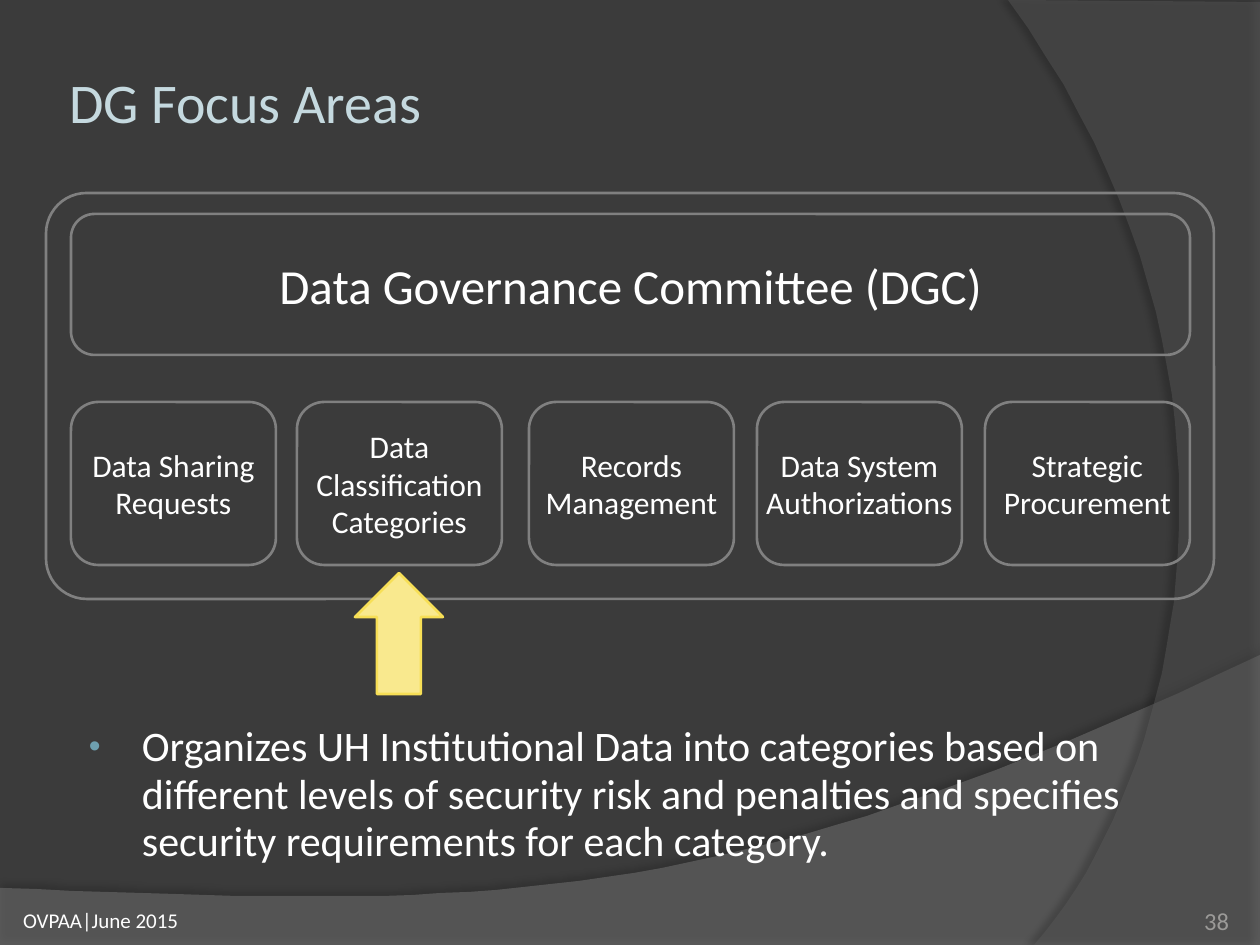
"""Builds the DG Focus Areas slide."""
from lxml.etree import SubElement
from pptx import Presentation
from pptx.dml.color import RGBColor
from pptx.enum.shapes import MSO_SHAPE as Preset
from pptx.enum.text import MSO_ANCHOR as Anchor, PP_ALIGN as Align
from pptx.oxml.ns import qn
from pptx.util import Pt

PX = 7257
WHITE, GRAY, YELLOW = "FFFFFF", "808080", "F9E98E"


def paint(shape, fill=None, line=None, alpha=None):
    shape.shadow.inherit = False
    if fill:
        shape.fill.solid()
        shape.fill.fore_color.rgb = RGBColor.from_string(fill)
    else:
        shape.fill.background()
    if line:
        shape.line.color.rgb = RGBColor.from_string(line)
        shape.line.width = Pt(1.5)
    else:
        shape.line.fill.background()
    if alpha:
        color = shape._element.spPr.find(qn("a:solidFill"))[0]
        SubElement(color, qn("a:alpha"), val=str(alpha * 1000))


def write(shape, text, size, color=WHITE, align=Align.LEFT, anchor=Anchor.MIDDLE, side=13, edge=6):
    frame = shape.text_frame
    frame.word_wrap = True
    frame.vertical_anchor = anchor
    frame.margin_left = frame.margin_right = side * PX
    frame.margin_top = frame.margin_bottom = edge * PX
    paragraph = frame.paragraphs[0]
    paragraph.alignment = align
    run = paragraph.add_run()
    run.text = text
    run.font.name = "Calibri"
    run.font.size = Pt(size)
    run.font.color.rgb = RGBColor.from_string(color)
    return paragraph


deck = Presentation()
deck.slide_width, deck.slide_height = 1260 * PX, 945 * PX
slide = deck.slides.add_slide(deck.slide_layouts[6])
shapes = slide.shapes
slide.background.fill.solid()
slide.background.fill.fore_color.rgb = RGBColor.from_string("3B3B3B")

swooshes = [
    ([(0, 888), (0, 945), (1260, 945), (1260, 655)],
     [(1260, 655), (704, 919), (493, 906), (0, 888)], "7F7F7F", 45, 35, 3.5, 270),
    ([(1260, 2), (1260, 945), (1034, 945)],
     [(1034, 945), (1178, 780), (1283, 378), (1008, 0)], "5E5E5E", 40, 45, 4, 180),
]
for corners, curve, color, alpha, shade, distance, angle in swooshes:
    arc = []
    for step in range(1, 41):
        t = step / 40
        weights = ((1 - t) ** 3, 3 * t * (1 - t) ** 2, 3 * t * t * (1 - t), t ** 3)
        arc.append(tuple(sum(w * p[axis] for w, p in zip(weights, curve)) for axis in (0, 1)))
    builder = shapes.build_freeform(*corners[0], scale=PX)
    builder.add_line_segments(corners[1:] + arc, close=True)
    swoosh = builder.convert_to_shape()
    paint(swoosh, color, alpha=alpha)
    effects = swoosh._element.spPr.find(qn("a:effectLst"))
    shadow = SubElement(effects, qn("a:outerShdw"), blurRad=str(Pt(4)),
                        dist=str(Pt(distance)), dir=str(angle * 60000), rotWithShape="0")
    shadow_color = SubElement(shadow, qn("a:srgbClr"), val="000000")
    SubElement(shadow_color, qn("a:alpha"), val=str(shade * 1000))

footer = shapes.add_textbox(10 * PX, 895 * PX, 294 * PX, 50 * PX)
write(footer, "OVPAA|June 2015", 12)
title = shapes.add_textbox(63 * PX, 38 * PX, 1029 * PX, 127 * PX)
write(title, "DG Focus Areas", 32, color="C5D9DF", side=6)
page_number = shapes.add_textbox(1124 * PX, 885 * PX, 105 * PX, 50 * PX)
write(page_number, "38", 14, color="9B9A98", align=Align.RIGHT, anchor=Anchor.BOTTOM, side=0, edge=0)

committee = shapes.add_shape(Preset.ROUNDED_RECTANGLE, 71 * PX, 214 * PX, 1119 * PX, 141 * PX)
paint(committee, line=GRAY)
write(committee, "Data Governance Committee (DGC)", 28, align=Align.CENTER)

focus_areas = [
    (71, "Data Sharing Requests"),
    (297, "Data Classification Categories"),
    (529, "Records Management"),
    (757, "Data System Authorizations"),
    (985, "Strategic Procurement"),
]
for left, name in focus_areas:
    area = shapes.add_shape(Preset.ROUNDED_RECTANGLE, left * PX, 402 * PX, 205 * PX, 163 * PX)
    paint(area, line=GRAY)
    write(area, name, 18, align=Align.CENTER, side=0)

enclosure = shapes.add_shape(Preset.ROUNDED_RECTANGLE, 46 * PX, 193 * PX, 1168 * PX, 406 * PX)
enclosure.adjustments[0] = 0.1
paint(enclosure, line=GRAY)

pointer = shapes.add_shape(Preset.UP_ARROW, 355 * PX, 573 * PX, 88 * PX, 121 * PX)
paint(pointer, YELLOW, "F7DF56")

description = shapes.add_textbox(71 * PX, 717 * PX, 1110 * PX, 203 * PX)
point = write(description, "Organizes UH Institutional Data into categories based on different levels of "
              "security risk and penalties and specifies security requirements for each category.",
              24, anchor=Anchor.TOP)
point.line_spacing = 0.95
point.space_before = Pt(12)
bullet = point._p.get_or_add_pPr()
bullet.set("marL", str(58 * PX))
bullet.set("indent", str(-53 * PX))
SubElement(SubElement(bullet, qn("a:buClr")), qn("a:srgbClr"), val="6EA0B0")
SubElement(bullet, qn("a:buSzPct"), val="80000")
SubElement(bullet, qn("a:buFont"), typeface="Arial")
SubElement(bullet, qn("a:buChar"), char="•")

deck.save("out.pptx")
